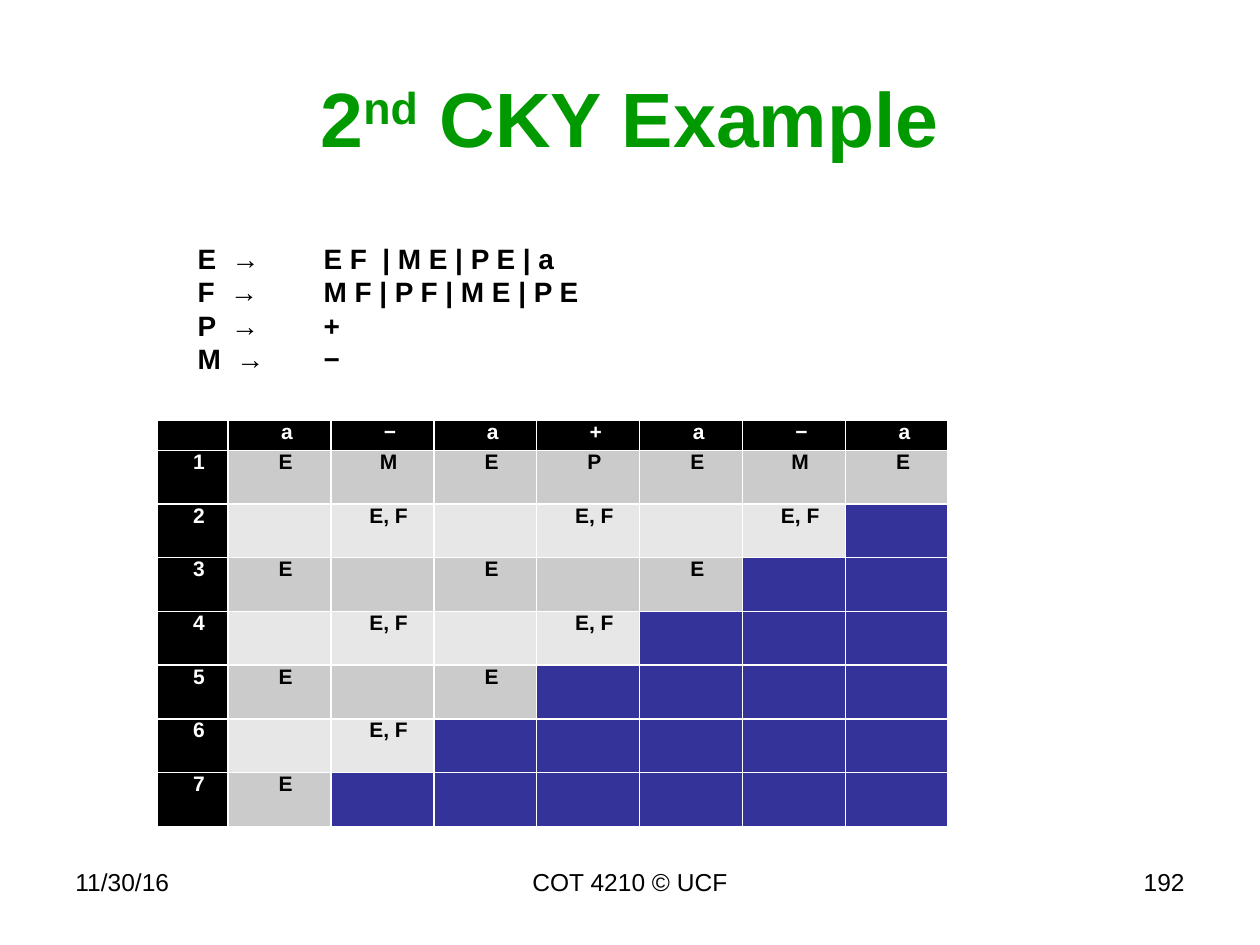
from pptx import Presentation
from pptx.dml.color import RGBColor
from pptx.enum import text as t
from pptx.oxml.ns import qn
from pptx.util import Pt
from lxml import etree

FONT = "Arial"
HUES = {"ink": "000000", "title": "009900", "white": "FFFFFF",
        "odd": "CBCBCB", "even": "E7E7E7", "unused": "333399"}
LEFT, MID, RIGHT = t.PP_ALIGN.LEFT, t.PP_ALIGN.CENTER, t.PP_ALIGN.RIGHT

TITLE = [("2", 0), ("nd", 30000), (" CKY Example", 0)]
RULES = ["E  →\tE F  | M E | P E | a",
         "F  →\tM F | P F | M E | P E",
         "P  → \t+",
         "M  → \t−"]
FOOTER = [("11/30/16", 36, 168, LEFT),
          ("COT 4210 © UCF", 246, 228, MID),
          ("192", 516, 168, RIGHT)]
WORD = ["a", "−", "a", "+", "a", "−", "a"]
CHART = [["E", "M", "E", "P", "E", "M", "E"],
         ["", "E, F", "", "E, F", "", "E, F"],
         ["E", "", "E", "", "E"],
         ["", "E, F", "", "E, F"],
         ["E", "", "E"],
         ["", "E, F"],
         ["E"]]


def style(para, size, hue="ink", bold=False, align=LEFT):
    para.alignment = align
    font = para.font
    font.name, font.size, font.bold = FONT, Pt(size), bold
    font.color.rgb = RGBColor.from_string(HUES[hue])


def add_box(slide, x, y, w, h):
    frame = slide.shapes.add_textbox(Pt(x), Pt(y), Pt(w), Pt(h)).text_frame
    frame.word_wrap = True
    return frame


def add_title(slide):
    frame = add_box(slide, 36, 21.6, 648, 90)
    frame.vertical_anchor = t.MSO_ANCHOR.MIDDLE
    para = frame.paragraphs[0]
    style(para, 44, "title", True, MID)
    for part, shift in TITLE:
        run = para.add_run()
        run.text = part
        if shift:
            run.font._element.set("baseline", str(shift))


def add_rules(slide):
    frame = add_box(slide, 105.84, 131.76, 512, 99.36)
    frame.margin_top = Pt(6)
    frame.text = "\n".join(RULES)
    for para in frame.paragraphs:
        style(para, 16, bold=True)
        props = para._p.get_or_add_pPr()
        tabs = etree.Element(qn("a:tabLst"))
        etree.SubElement(tabs, qn("a:tab"), pos=str(Pt(72)), algn="l")
        props.find(qn("a:defRPr")).addprevious(tabs)


def fill_cell(cell, words, hue, ink, indent):
    cell.fill.solid()
    cell.fill.fore_color.rgb = RGBColor.from_string(HUES[hue])
    cell.margin_left = cell.margin_right = Pt(4.5)
    cell.margin_top = cell.margin_bottom = 0
    para = cell.text_frame.paragraphs[0]
    if not words:
        para._p.get_or_add_endParaRPr().set("sz", "1200")
        return
    para.text = words
    style(para, 12, ink, True, MID)
    left, first = indent
    props = para._p.get_or_add_pPr()
    props.set("marL", str(Pt(left)))
    props.set("indent", str(Pt(first)))


def add_grid(slide):
    size = len(WORD)
    wide, tall = 58.8, 30.7
    grid = slide.shapes.add_table(
        size + 1, size + 1, Pt(90), Pt(240),
        Pt(40.3 + size * wide), Pt(17.3 + size * tall)).table
    for i in range(size + 1):
        grid.columns[i].width = Pt(wide if i else 40.3)
        grid.rows[i].height = Pt(tall if i else 17.3)

    for col, words in enumerate([""] + WORD):
        fill_cell(grid.cell(0, col), words, "ink", "white", (31, -22.3))
    for row, found in enumerate(CHART, 1):
        band = "odd" if row % 2 else "even"
        fill_cell(grid.cell(row, 0), str(row), "ink", "white", (21.6, -14.4))
        for col in range(1, size + 1):
            used = col <= len(found)
            fill_cell(grid.cell(row, col), found[col - 1] if used else "",
                      band if used else "unused", "ink", (21.6, -14.4))


def main():
    deck = Presentation()
    deck.slide_width, deck.slide_height = Pt(720), Pt(540)
    slide = deck.slides.add_slide(deck.slide_layouts[6])
    add_title(slide)
    for words, x, w, align in FOOTER:
        para = add_box(slide, x, 491.75, w, 37.5).paragraphs[0]
        para.text = words
        style(para, 14, align=align)
    add_grid(slide)
    add_rules(slide)
    deck.save("out.pptx")


if __name__ == "__main__":
    main()
